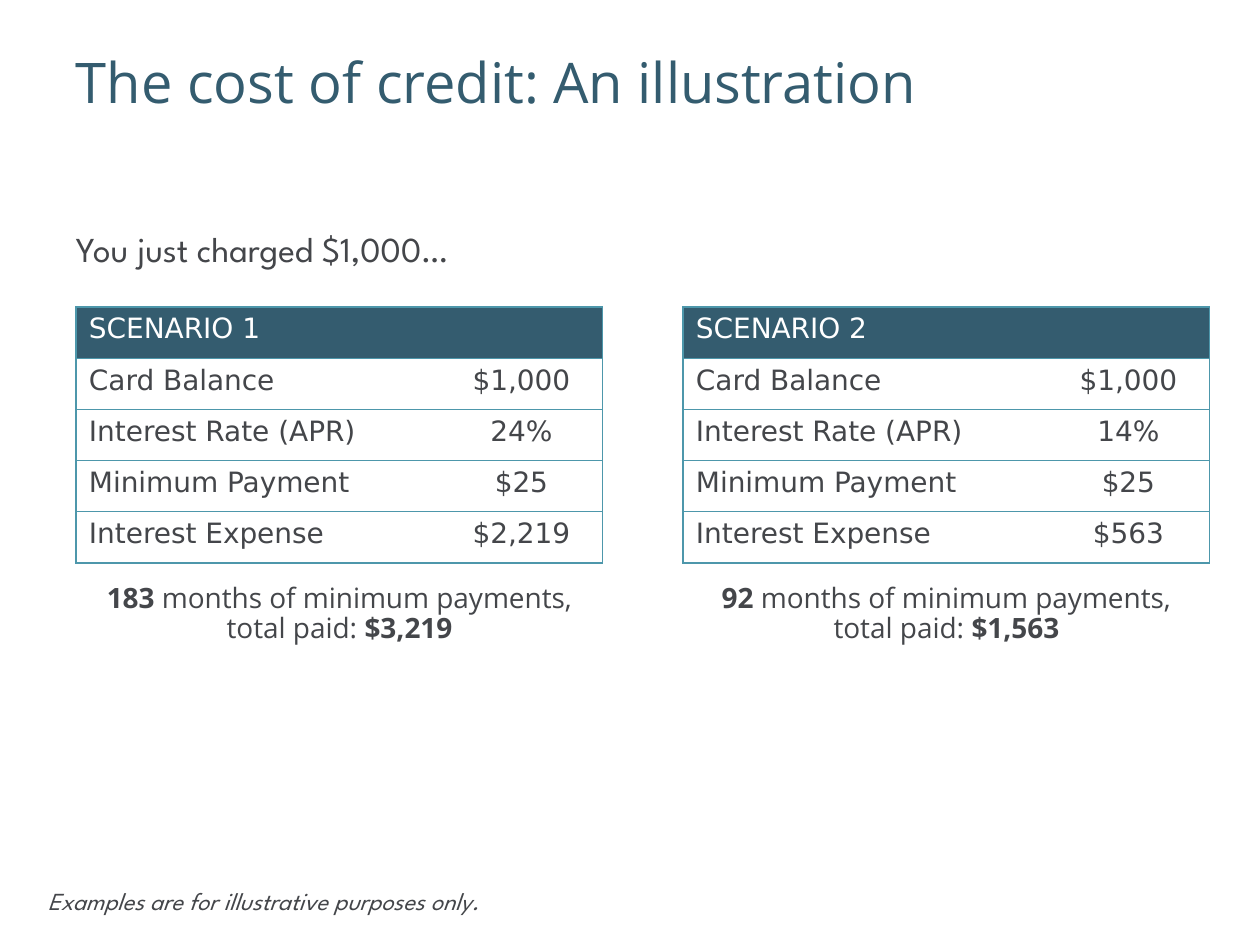
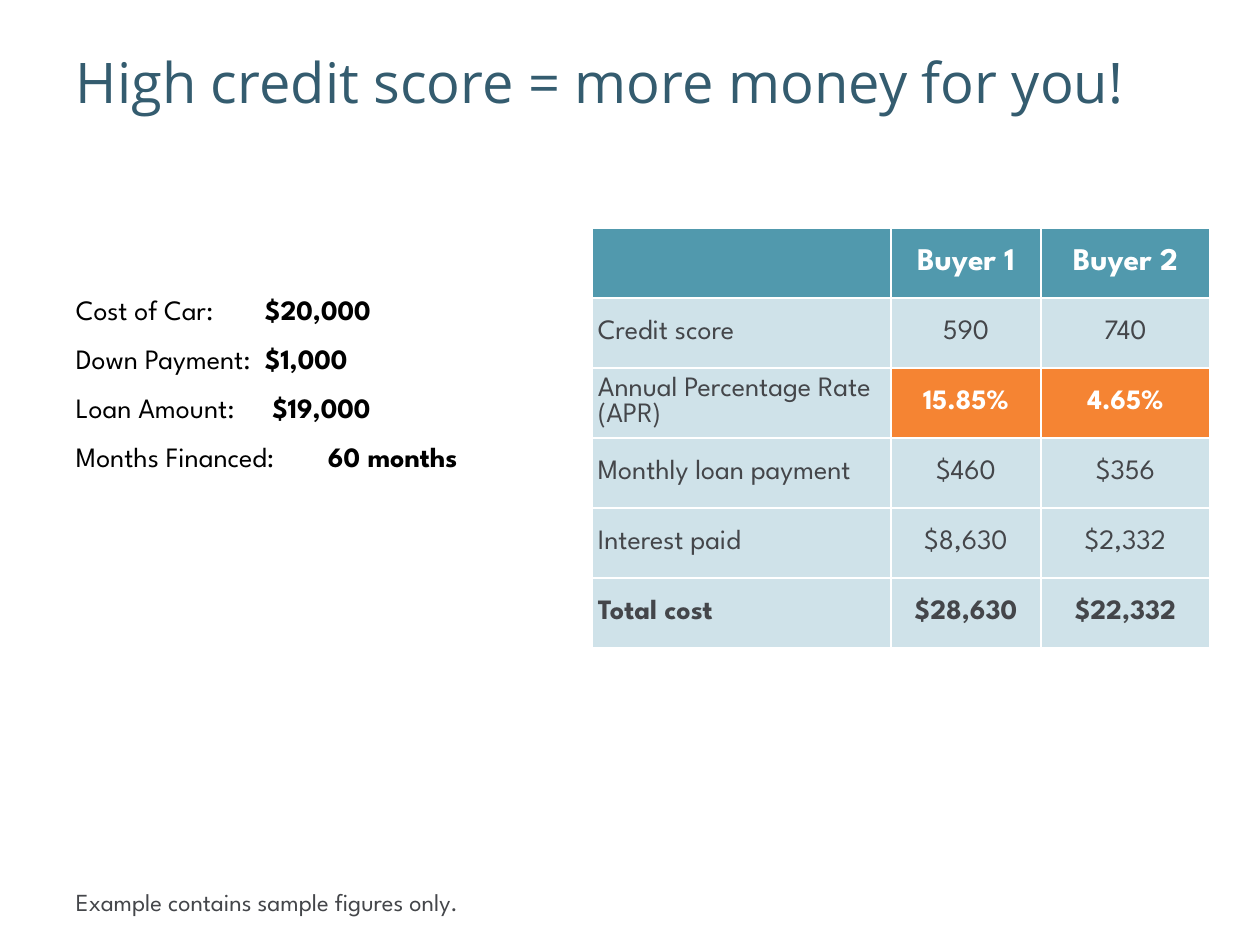
from dataclasses import dataclass

from lxml.etree import SubElement
from pptx import Presentation
from pptx.dml.color import RGBColor
from pptx.enum.text import MSO_ANCHOR, MSO_AUTO_SIZE, PP_ALIGN
from pptx.oxml import parse_xml
from pptx.oxml.ns import nsdecls, qn
from pptx.util import Pt

SCENARIOS = [
    {
        "rows": [
            ("SCENARIO 1", ""),
            ("Card Balance", "$1,000"),
            ("Interest Rate (APR)", "24%"),
            ("Minimum Payment", "$25"),
            ("Interest Expense", "$2,219"),
        ],
        "months": "183",
        "total": "$3,219",
    },
    {
        "rows": [
            ("SCENARIO 2", ""),
            ("Card Balance", "$1,000"),
            ("Interest Rate (APR)", "14%"),
            ("Minimum Payment", "$25"),
            ("Interest Expense", "$563"),
        ],
        "months": "92",
        "total": "$1,563",
    },
]
LOAN_FACTS = [
    ("Cost of Car:", "$20,000"),
    ("Down Payment:", "$1,000"),
    ("Loan Amount:", " $19,000"),
    ("Months Financed:", "60 months"),
]
BUYERS = [
    ("", "Buyer 1", "Buyer 2"),
    ("Credit score", "590", "740"),
    ("Annual Percentage Rate (APR)", "15.85%", "4.65%"),
    ("Monthly loan payment", "$460", "$356"),
    ("Interest paid", "$8,630", "$2,332"),
    ("Total cost", "$28,630", "$22,332"),
]
RATE_ROW = 2
TOTAL_ROW = 5


@dataclass(frozen=True)
class Theme:
    navy: str = "345C6F"
    teal: str = "4D97AB"
    header: str = "5199AD"
    tint: str = "00698C"
    tint_percent: int = 19
    orange: str = "F58433"
    gray: str = "44464A"
    black: str = "000000"
    white: str = "FFFFFF"
    sans: str = "Open Sans"
    display: str = "League Spartan"
    tabular: str = "DejaVu Sans"
    title_size: int = 32
    lead_size: int = 20
    heading_size: int = 18
    text_size: int = 16
    note_size: int = 14


THEME = Theme()
EMU_PER_PX = 914400 / 126
SLIDE_SIZE = (1260, 945)
LEFT = 76
RIGHT = 1210
TITLE_BOX = (LEFT, 44, 1134, 157)
LEAD_BOX = (LEFT, 227, 1134, 89)
FACTS_BOX = (LEFT, 284, 454, 215)
FACTS_TAB = 285
SCENARIO_TOP, SCENARIO_HEIGHT = 307, 256
SCENARIO_COLUMNS = (364, 163)
CAPTION_TOP, CAPTION_HEIGHT = 578, 81
BUYER_TOP, BUYER_HEIGHT = 228, 420
BUYER_COLUMNS = (299, 150, 169)
NOTE_WIDTH, NOTE_HEIGHT = 1109, 30
SCENARIO_MARGINS = (13, 6)
BUYER_MARGINS = (6, 6)


def px(length):
    return round(length * EMU_PER_PX)


def apply(target, formats):
    for name, value in formats.items():
        setattr(target, name, value)


def place(shape, box):
    apply(shape, dict(zip(("left", "top", "width", "height"), map(px, box))))


def frame_of(shape, inset=(0, 0)):
    horizontal, vertical = map(px, inset)
    frame = shape.text_frame
    apply(frame, {
        "word_wrap": True,
        "auto_size": MSO_AUTO_SIZE.NONE,
        "vertical_anchor": MSO_ANCHOR.TOP,
        "margin_left": horizontal,
        "margin_right": horizontal,
        "margin_top": vertical,
        "margin_bottom": vertical,
    })
    return frame


def add_run(paragraph, text, font, size, color, bold=False, italic=False):
    run = paragraph.add_run()
    run.text = text
    apply(run.font, {"name": font, "size": Pt(size), "bold": bold, "italic": italic})
    run.font.color.rgb = RGBColor.from_string(color)


def remove_bullet(paragraph):
    properties = paragraph._p.get_or_add_pPr()
    properties.set("marL", "0")
    properties.set("indent", "0")
    SubElement(properties, qn("a:buNone"))
    return properties


def new_slide(presentation, title):
    slide = presentation.slides.add_slide(presentation.slide_layouts[1])
    place(slide.shapes.title, TITLE_BOX)
    paragraph = frame_of(slide.shapes.title).paragraphs[0]
    apply(paragraph, {"alignment": PP_ALIGN.LEFT, "line_spacing": 1.05})
    add_run(paragraph, title, THEME.sans, THEME.title_size, THEME.navy)
    return slide


def add_note(slide, text, left, top, italic=False):
    box = slide.shapes.add_textbox(*map(px, (left, top, NOTE_WIDTH, NOTE_HEIGHT)))
    paragraph = frame_of(box).paragraphs[0]
    paragraph.space_before = Pt(5)
    add_run(paragraph, text, THEME.display, THEME.note_size, THEME.gray, italic=italic)


def add_table(slide, rows, left, top, height, columns):
    box = map(px, (left, top, sum(columns), height))
    table = slide.shapes.add_table(len(rows), len(columns), *box).table
    apply(table, {"first_row": False, "horz_banding": False})
    for column, width in zip(table.columns, columns):
        column.width = px(width)
    return table


def fill_cell(cell, color, percent=100):
    cell.fill.solid()
    cell.fill.fore_color.rgb = RGBColor.from_string(color)
    if percent < 100:
        color_node = cell._tc.tcPr.find(".//" + qn("a:srgbClr"))
        SubElement(color_node, qn("a:alpha")).set("val", str(percent * 1000))


def border_cell(cell, color, width, edges="LRTB"):
    for index, edge in enumerate("LRTB"):
        paint = "<a:noFill/>"
        if edge in edges:
            paint = f'<a:solidFill><a:srgbClr val="{color}"/></a:solidFill>'
        line = f'<a:ln{edge} {nsdecls("a")} w="{Pt(width)}">{paint}</a:ln{edge}>'
        cell._tc.tcPr.insert(index, parse_xml(line))


def write_cell(cell, text, column, anchor, margins, **style):
    horizontal, vertical = map(px, margins)
    apply(cell, {
        "vertical_anchor": anchor,
        "margin_left": horizontal,
        "margin_right": horizontal,
        "margin_top": vertical,
        "margin_bottom": vertical,
    })
    paragraph = cell.text_frame.paragraphs[0]
    paragraph.alignment = PP_ALIGN.CENTER if column else PP_ALIGN.LEFT
    add_run(paragraph, text, **style)


def add_scenario(slide, scenario, left):
    rows = scenario["rows"]
    table = add_table(slide, rows, left, SCENARIO_TOP, SCENARIO_HEIGHT, SCENARIO_COLUMNS)
    for row, values in enumerate(rows):
        for column, text in enumerate(values):
            cell = table.cell(row, column)
            write_cell(cell, text, column, MSO_ANCHOR.TOP, SCENARIO_MARGINS,
                       font=THEME.tabular, size=THEME.text_size,
                       color=THEME.gray if row else THEME.white)
            fill_cell(cell, THEME.white if row else THEME.navy)
            border_cell(cell, THEME.teal, 0.75, "RTB" if column else "LTB")

    width = sum(SCENARIO_COLUMNS)
    box = slide.shapes.add_textbox(*map(px, (left, CAPTION_TOP, width, CAPTION_HEIGHT)))
    paragraph = frame_of(box, SCENARIO_MARGINS).paragraphs[0]
    apply(paragraph, {"alignment": PP_ALIGN.CENTER, "line_spacing": 0.9})
    for text, bold in (
        (scenario["months"], True),
        (" months of minimum payments, total paid: ", False),
        (scenario["total"], True),
    ):
        add_run(paragraph, text, THEME.sans, THEME.text_size, THEME.gray, bold)


def build_cost_slide(presentation):
    slide = new_slide(presentation, "The cost of credit: An illustration")
    body = slide.placeholders[1]
    place(body, LEAD_BOX)
    paragraph = frame_of(body).paragraphs[0]
    apply(paragraph, {"space_before": Pt(7), "space_after": Pt(12)})
    remove_bullet(paragraph)
    add_run(paragraph, "You just charged $1,000…", THEME.display, THEME.lead_size, THEME.gray)
    lefts = (LEFT, RIGHT - sum(SCENARIO_COLUMNS))
    for scenario, left in zip(SCENARIOS, lefts):
        add_scenario(slide, scenario, left)
    add_note(slide, "Examples are for illustrative purposes only.", 48, 886, italic=True)


def add_loan_facts(slide):
    body = slide.placeholders[1]
    place(body, FACTS_BOX)
    frame = frame_of(body)
    for index, (label, value) in enumerate(LOAN_FACTS):
        paragraph = frame.add_paragraph() if index else frame.paragraphs[0]
        apply(paragraph, {"line_spacing": Pt(24), "space_before": Pt(4)})
        tabs = SubElement(remove_bullet(paragraph), qn("a:tabLst"))
        tab = SubElement(tabs, qn("a:tab"))
        tab.set("pos", str(px(FACTS_TAB)))
        tab.set("algn", "l")
        for text, bold in ((label + "\t", False), (value, True)):
            add_run(paragraph, text, THEME.display, THEME.text_size, THEME.black, bold)


def add_buyers(slide):
    left = RIGHT - sum(BUYER_COLUMNS)
    table = add_table(slide, BUYERS, left, BUYER_TOP, BUYER_HEIGHT, BUYER_COLUMNS)
    for row, values in enumerate(BUYERS):
        for column, text in enumerate(values):
            cell = table.cell(row, column)
            is_header = row == 0
            is_rate = row == RATE_ROW and column > 0
            strong = is_header or is_rate
            write_cell(cell, text, column, MSO_ANCHOR.MIDDLE, BUYER_MARGINS,
                       font=THEME.display,
                       size=THEME.heading_size if is_header else THEME.text_size,
                       color=THEME.white if strong else THEME.gray,
                       bold=strong or row == TOTAL_ROW)
            if strong:
                fill_cell(cell, THEME.header if is_header else THEME.orange)
            else:
                fill_cell(cell, THEME.tint, THEME.tint_percent)
            border_cell(cell, THEME.white, 1.5)


def build_score_slide(presentation):
    slide = new_slide(presentation, "High credit score = more money for you!")
    add_loan_facts(slide)
    add_buyers(slide)
    add_note(slide, "Example contains sample figures only.", LEFT, 887)


def main():
    presentation = Presentation()
    width, height = map(px, SLIDE_SIZE)
    apply(presentation, {"slide_width": width, "slide_height": height})
    build_cost_slide(presentation)
    build_score_slide(presentation)
    presentation.save("out.pptx")


if __name__ == "__main__":
    main()
